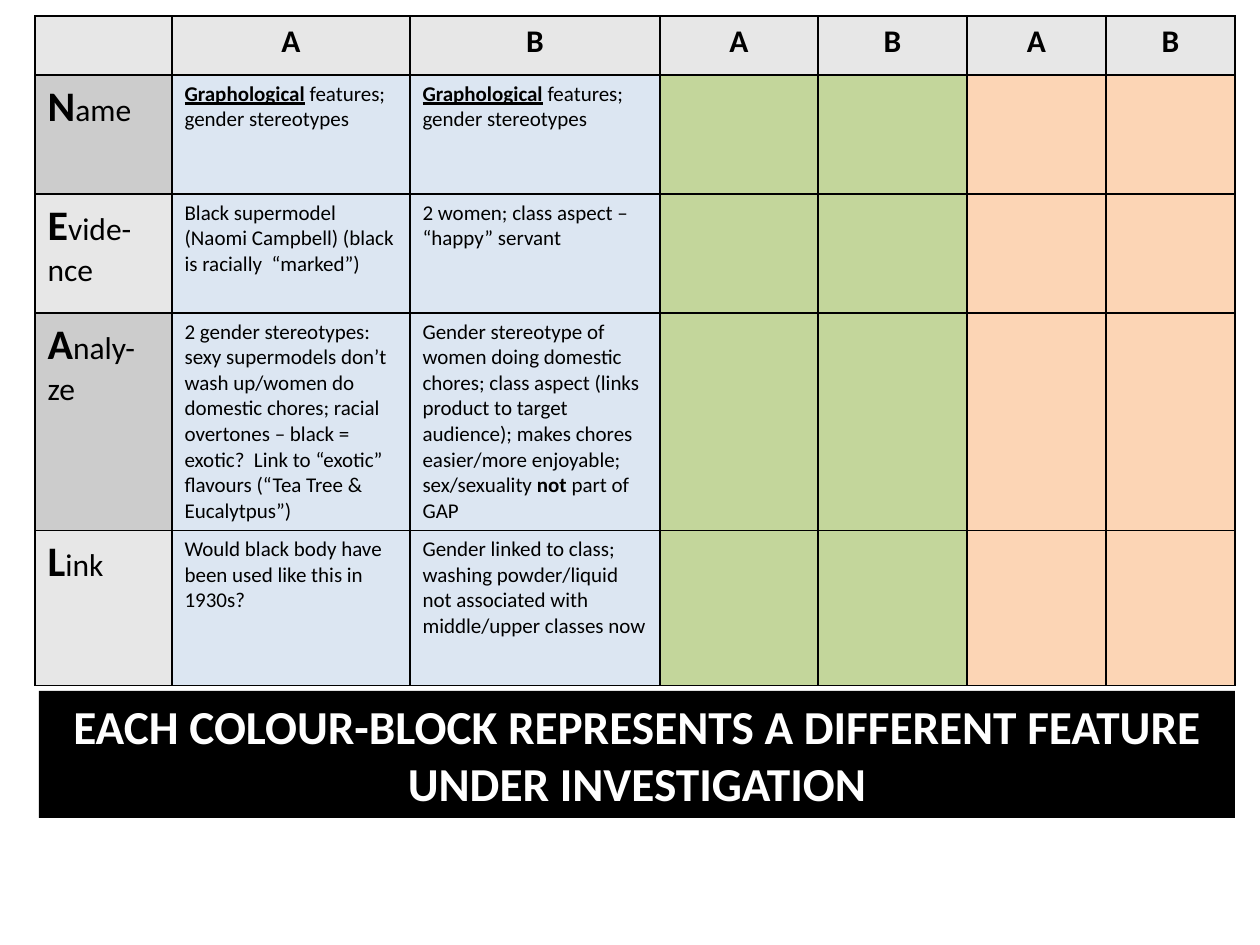
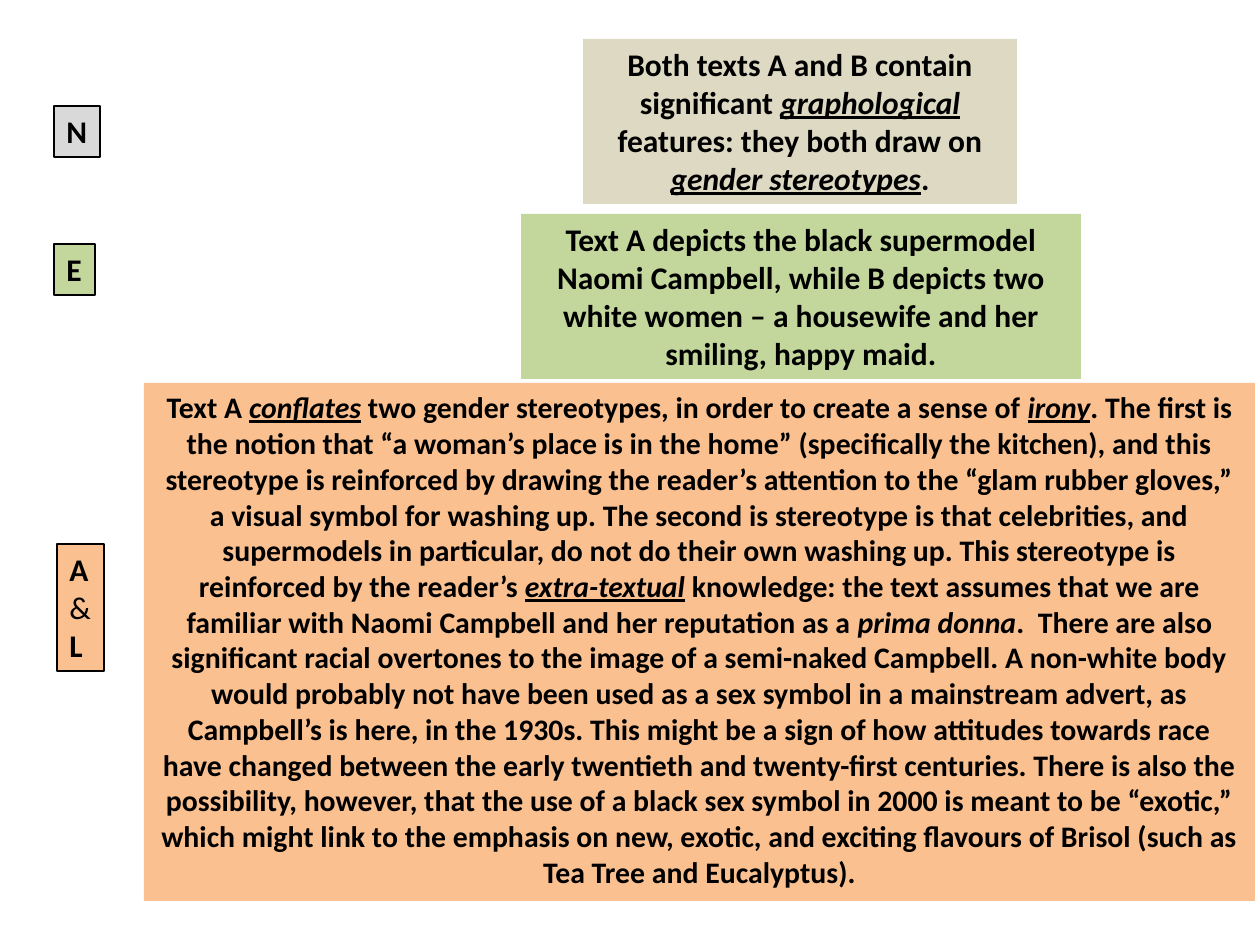
from lxml.etree import SubElement
from pptx import Presentation
from pptx.dml.color import RGBColor
from pptx.enum.text import MSO_AUTO_SIZE, PP_ALIGN
from pptx.oxml.ns import qn
from pptx.util import Emu, Pt

EMU_PER_PX = 914400 / 126
FONT = "Calibri"
BLANK = 6

BLACK = RGBColor(0x00, 0x00, 0x00)
WHITE = RGBColor(0xFF, 0xFF, 0xFF)
HEADER_GREY = RGBColor(0xE7, 0xE7, 0xE7)
DARK_GREY = RGBColor(0xCC, 0xCC, 0xCC)
LABEL_GREY = RGBColor(0xD9, 0xD9, 0xD9)
BLUE = RGBColor(0xDC, 0xE6, 0xF2)
GREEN = RGBColor(0xC3, 0xD6, 0x9B)
PEACH = RGBColor(0xFC, 0xD5, 0xB5)
ORANGE = RGBColor(0xFA, 0xC0, 0x90)
TAN = RGBColor(0xDD, 0xD9, 0xC3)

COLUMN_WIDTHS = [137, 238, 250, 158, 149, 139, 129]
ROW_HEIGHTS = [59, 119, 119, 155, 155]
FEATURE_FILLS = [BLUE, BLUE, GREEN, GREEN, PEACH, PEACH]

# A paragraph is a list of runs: (text, style), style being letters from "biu".
GRAPHOLOGY = [("Graphological", "bu"), (" features; gender stereotypes", "")]
NEAL_ROWS = [
    ("N", "ame", GRAPHOLOGY, GRAPHOLOGY),
    ("E", "vide-nce",
     [("Black supermodel (Naomi Campbell) (black is racially  “marked”)", "")],
     [("2 women; class aspect – “happy” servant", "")]),
    ("A", "naly-ze",
     [("2 gender stereotypes: sexy supermodels don’t wash up/women do domestic "
       "chores; racial overtones – black = exotic?  Link to “exotic” flavours "
       "(“Tea Tree & Eucalytpus”)", "")],
     [("Gender stereotype of women doing domestic chores; class aspect (links "
       "product to target audience); makes chores easier/more enjoyable; "
       "sex/sexuality ", ""), ("not", "b"), (" part of GAP", "")]),
    ("L", "ink",
     [("Would black body have been used like this in 1930s?", "")],
     [("Gender linked to class; washing powder/liquid not associated with "
       "middle/upper classes now", "")]),
]

NAME_TEXT = [[
    ("Both texts A and B contain significant ", "b"), ("graphological", "biu"),
    (" features: they both draw on ", "b"), ("gender stereotypes", "biu"),
    (".", "b")]]
EVIDENCE_TEXT = [
    [("Text A depicts the black supermodel", "b")],
    [("Naomi Campbell, while B depicts two white women – a housewife and her "
      "smiling, happy maid.", "b")]]
ANALYSIS_TEXT = [[
    ("Text A ", "b"), ("conflates", "biu"),
    (" two gender stereotypes, in order to create a sense of ", "b"),
    ("irony", "biu"),
    (". The first is the notion that “a woman’s place is in the home” "
     "(specifically the kitchen), and this stereotype is reinforced by drawing "
     "the reader’s attention to the “glam rubber gloves,” a visual symbol for "
     "washing up. The second is stereotype is that celebrities, and supermodels "
     "in particular, do not do their own washing up. This stereotype is "
     "reinforced by the reader’s ", "b"),
    ("extra-textual", "biu"),
    (" knowledge: the text assumes that we are familiar with Naomi Campbell and "
     "her reputation as a ", "b"),
    ("prima donna", "bi"),
    (".  There are also significant racial overtones to the image of a "
     "semi-naked Campbell. A non-white body would probably not have been used "
     "as a sex symbol in a mainstream advert, as Campbell’s is here, in the "
     "1930s. This might be a sign of how attitudes towards race have changed "
     "between the early twentieth and twenty-first centuries. There is also the "
     "possibility, however, that the use of a black sex symbol in 2000 is meant "
     "to be “exotic,” which might link to the emphasis on new, exotic, and "
     "exciting flavours of Brisol (such as Tea Tree and Eucalyptus).", "b")]]


def px(n):
    return Emu(round(n * EMU_PER_PX))


def add_run(p, text, style, size, color=BLACK):
    r = p.add_run()
    r.text = text
    font = r.font
    font.name, font.size, font.color.rgb = FONT, Pt(size), color
    font.bold = "b" in style
    font.italic = "i" in style
    font.underline = "u" in style


def fill_paragraph(p, runs, size, color=BLACK, align=PP_ALIGN.LEFT):
    p.alignment = align
    for text, style in runs:
        add_run(p, text, style, size, color)


def add_box(s, box, fill, paragraphs, size, color=BLACK, align=PP_ALIGN.CENTER):
    sp = s.shapes.add_textbox(*map(px, box))
    sp.fill.solid()
    sp.fill.fore_color.rgb = fill
    tf = sp.text_frame
    tf.word_wrap = True
    tf.auto_size = MSO_AUTO_SIZE.SHAPE_TO_FIT_TEXT
    for i, runs in enumerate(paragraphs):
        p = tf.add_paragraph() if i else tf.paragraphs[0]
        fill_paragraph(p, runs, size, color, align)
    return sp


def add_label(s, box, fill, paragraphs):
    """Add an outlined letter tag in the left margin."""
    sp = add_box(s, box, fill, paragraphs, 18, align=PP_ALIGN.LEFT)
    sp.text_frame.word_wrap = False
    sp.line.color.rgb = BLACK
    sp.line.width = Pt(0.75)


def style_cell(cell, fill):
    """Give a cell thin black borders and a solid fill."""
    tc_pr = cell._tc.get_or_add_tcPr()
    for side in ("a:lnL", "a:lnR", "a:lnT", "a:lnB"):
        ln = SubElement(tc_pr, qn(side), w=str(Pt(1)))
        SubElement(SubElement(ln, qn("a:solidFill")), qn("a:srgbClr"), val=str(BLACK))
    cell.fill.solid()
    cell.fill.fore_color.rgb = fill


def add_neal_table(s):
    frame = s.shapes.add_table(
        len(ROW_HEIGHTS), len(COLUMN_WIDTHS), px(35), px(16),
        px(sum(COLUMN_WIDTHS)), px(sum(ROW_HEIGHTS)))
    table = frame.table
    table.first_row = table.horz_banding = False
    for column, width in zip(table.columns, COLUMN_WIDTHS):
        column.width = px(width)
    for row, height in zip(table.rows, ROW_HEIGHTS):
        row.height = px(height)

    for i, row in enumerate(table.rows):
        if i == 0:
            fills = [HEADER_GREY] * len(COLUMN_WIDTHS)
        else:
            fills = [DARK_GREY if i % 2 else HEADER_GREY] + FEATURE_FILLS
        for cell, fill in zip(row.cells, fills):
            style_cell(cell, fill)

    for col in range(1, len(COLUMN_WIDTHS)):
        p = table.cell(0, col).text_frame.paragraphs[0]
        fill_paragraph(p, [("AB"[(col - 1) % 2], "b")], 18, align=PP_ALIGN.CENTER)
    for i, (initial, rest, *notes) in enumerate(NEAL_ROWS, 1):
        p = table.cell(i, 0).text_frame.paragraphs[0]
        add_run(p, initial, "b", 24)
        add_run(p, rest, "", 18)
        for col, runs in enumerate(notes, 1):
            fill_paragraph(table.cell(i, col).text_frame.paragraphs[0], runs, 12)


def build_planning_slide(prs):
    s = prs.slides.add_slide(prs.slide_layouts[BLANK])
    add_neal_table(s)
    banner = "EACH COLOUR-BLOCK REPRESENTS A DIFFERENT FEATURE UNDER INVESTIGATION"
    add_box(s, (39, 691, 1196, 127), BLACK, [[(banner, "b")]], 27, WHITE)


def build_paragraph_slide(prs):
    s = prs.slides.add_slide(prs.slide_layouts[BLANK])
    add_box(s, (583, 39, 434, 165), TAN, NAME_TEXT, 18)
    add_box(s, (521, 214, 560, 165), GREEN, EVIDENCE_TEXT, 18)
    add_box(s, (144, 383, 1111, 518), ORANGE, ANALYSIS_TEXT, 17)
    add_label(s, (57, 544, 47, 127), ORANGE, [[("A", "b")], [("&", "")], [("L", "b")]])
    add_label(s, (54, 244, 41, 51), GREEN, [[("E", "b")]])
    add_label(s, (54, 106, 46, 51), LABEL_GREY, [[("N", "b")]])


def main():
    prs = Presentation()
    prs.slide_width, prs.slide_height = px(1260), px(945)
    build_planning_slide(prs)
    build_paragraph_slide(prs)
    prs.save("out.pptx")


if __name__ == "__main__":
    main()
